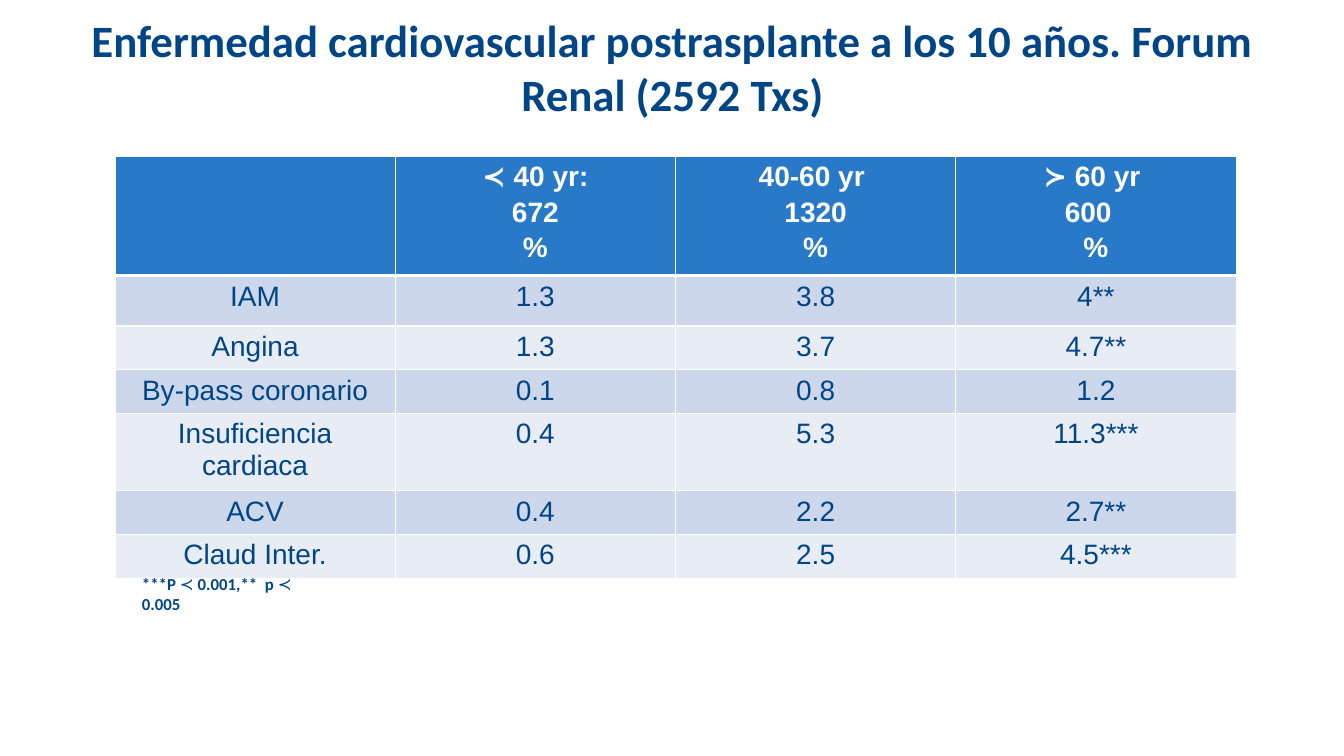
from lxml.etree import SubElement
from pptx import Presentation
from pptx.dml.color import RGBColor
from pptx.enum.text import MSO_ANCHOR as Anchor, PP_ALIGN as Align
from pptx.oxml.ns import qn
from pptx.util import Inches, Pt

NAVY = RGBColor(0x00, 0x45, 0x86)
BLUE = RGBColor(0x28, 0x7A, 0xC8)
WHITE = RGBColor(0xFF, 0xFF, 0xFF)
BANDS = RGBColor(0xCD, 0xD7, 0xEB), RGBColor(0xE8, 0xEC, 0xF5)

TITLE_FORMAT = {"name": "Calibri", "size": Pt(32), "bold": True}
NOTE_FORMAT = {"name": "Calibri", "size": Pt(12), "bold": True}
HEAD_FORMAT = {"name": "Arial", "size": Pt(20), "bold": True}
BODY_FORMAT = {"name": "Arial", "size": Pt(20), "bold": False}

TITLE = "Enfermedad cardiovascular postrasplante a los 10 años. Forum Renal (2592 Txs)"
NOTE_SPANS = ["***P ", "≺", " 0.001,**  p ", "≺", " 0.005"]
ROWS = [
    ["", "≺ 40 yr:\n672\n%", "40-60 yr \n1320\n%", "≻ 60 yr \n600  \n%"],
    ["IAM", "1.3", "3.8", "4**"],
    ["Angina", "1.3", "3.7", "4.7**"],
    ["By-pass coronario", "0.1", "0.8", "1.2"],
    ["Insuficiencia cardiaca", "0.4", "5.3", "11.3***"],
    ["ACV", "0.4", "2.2", "2.7**"],
    ["Claud Inter.", "0.6", "2.5", "4.5***"],
]
ROW_HEIGHTS = [1.15, 0.5] + [0.4] * 5


def set_font(font, formats, color):
    for name, value in formats.items():
        setattr(font, name, value)
    font.color.rgb = color


def add_text(page, box, spans, formats, align, anchor):
    """Write one paragraph; the precedence signs stay unbolded."""
    frame = page.shapes.add_textbox(*map(Inches, box)).text_frame
    frame.word_wrap = True
    frame.vertical_anchor = anchor
    para = frame.paragraphs[0]
    para.alignment = align
    for text in spans:
        span = para.add_run()
        span.text = text
        set_font(span.font, formats, NAVY)
        if text == "≺":
            span.font.bold = False


def set_borders(cell, top, bottom):
    """Draw white cell borders, with top and bottom widths in points."""
    props = cell._tc.get_or_add_tcPr()
    for side, width in {"L": 1, "R": 1, "T": top, "B": bottom}.items():
        line = SubElement(props, qn(f"a:ln{side}"), w=str(Pt(width)))
        fill = SubElement(line, qn("a:solidFill"))
        SubElement(fill, qn("a:srgbClr"), val=str(WHITE))


def fill_cell(cell, text, row):
    is_head = row == 0
    set_borders(cell, 3 if row == 1 else 1, 3 if is_head else 1)
    cell.fill.solid()
    cell.fill.fore_color.rgb = BLUE if is_head else BANDS[(row - 1) % 2]
    cell.text = text
    for index, para in enumerate(cell.text_frame.paragraphs):
        para.alignment = Align.CENTER
        if index:
            para.space_before = Pt(3)
        formats, color = (HEAD_FORMAT, WHITE) if is_head else (BODY_FORMAT, NAVY)
        set_font(para.font, formats, color)
        for span in para.runs:
            set_font(span.font, formats, color)


def add_disease_table(page, box):
    table = page.shapes.add_table(len(ROWS), len(ROWS[0]), *map(Inches, box)).table
    for column in table.columns:
        column.width = Inches(box[2] / len(ROWS[0]))
    for row, texts in enumerate(ROWS):
        table.rows[row].height = Inches(ROW_HEIGHTS[row])
        for column, text in enumerate(texts):
            fill_cell(table.cell(row, column), text, row)


def main():
    deck = Presentation()
    deck.slide_width, deck.slide_height = Inches(13.33), Inches(7.5)
    page = deck.slides.add_slide(deck.slide_layouts[6])
    add_text(page, (0.67, 0.33, 12, 0.66), [TITLE], TITLE_FORMAT, Align.CENTER, Anchor.MIDDLE)
    add_disease_table(page, (1.14, 1.55, 11.12, sum(ROW_HEIGHTS)))
    add_text(page, (1.31, 5.64, 2.1, 0.3), NOTE_SPANS, NOTE_FORMAT, Align.LEFT, Anchor.TOP)
    deck.save("out.pptx")


if __name__ == "__main__":
    main()
